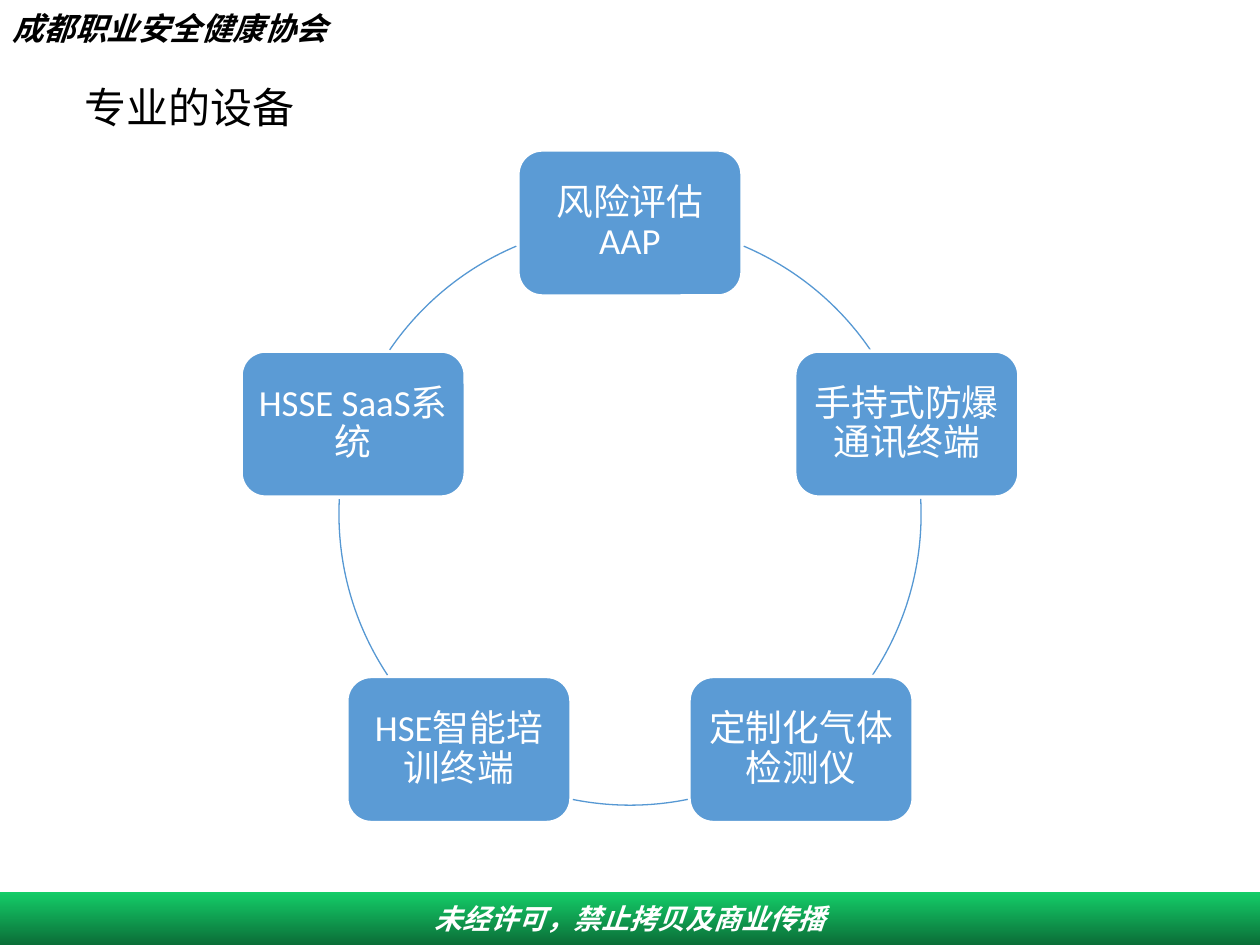
from math import cos, radians, sin

from pptx import Presentation
from pptx.dml.color import RGBColor
from pptx.enum.shapes import MSO_SHAPE as SHAPE
from pptx.enum.text import MSO_ANCHOR as ANCHOR, PP_ALIGN as ALIGN
from pptx.util import Inches, Pt

COLORS = {
    "white": "FFFFFF", "black": "000000", "box": "5B9BD5", "arc": "5698D3",
    "green": "14CD68", "dark_green": "0B6E38",
}


def rgb(name):
    return RGBColor.from_string(COLORS[name])


def write(sp, text, size, color, font="Calibri", bold=False, italic=False,
          align=ALIGN.LEFT, anchor=ANCHOR.MIDDLE, spacing=1.0):
    tf = sp.text_frame
    tf.word_wrap = True
    tf.vertical_anchor = anchor
    p = tf.paragraphs[0]
    p.alignment = align
    p.line_spacing = spacing
    r = p.add_run()
    r.text = text
    r.font.name, r.font.size = font, Pt(size)
    r.font.bold, r.font.italic = bold, italic
    r.font.color.rgb = rgb(color)


prs = Presentation()
prs.slide_width, prs.slide_height = Inches(10), Inches(7.5)
s = prs.slides.add_slide(prs.slide_layouts[5])

# Header and footer bands
header = s.shapes.add_shape(SHAPE.RECTANGLE, 0, 0, Inches(10), Inches(0.45))
header.fill.solid()
header.fill.fore_color.rgb = rgb("white")
write(header, "成都职业安全健康协会", 18, "black", font="Arial", bold=True, italic=True)

footer = s.shapes.add_shape(SHAPE.RECTANGLE, 0, Inches(7.08), Inches(10), Inches(0.42))
footer.fill.gradient()
footer.fill.gradient_angle = 270
for stop, color, position in zip(footer.fill.gradient_stops, ("green", "dark_green"), (0, 1)):
    stop.color.rgb = rgb(color)
    stop.position = position
write(footer, "未经许可，禁止拷贝及商业传播", 16, "white", bold=True, italic=True,
      align=ALIGN.CENTER)

for band in (header, footer):
    band.line.fill.background()
    band.shadow.inherit = False

# Title
title = s.shapes.title
title.left, title.top = Inches(0.57), Inches(0.6)
title.width, title.height = Inches(5.18), Inches(0.5)
write(title, "专业的设备", 24, "black", font="Noto Sans CJK SC", anchor=ANCHOR.TOP)

# Cycle: boxes evenly spaced on a circle, each followed by an arc to the next
CX, CY, RADIUS = 5, 4.08, 2.31
BOX_W, BOX_H = 1.78, 1.16
devices = [  # label, arc start and end in degrees
    ("风险评估AAP", 293, 325.65),
    ("手持式防爆通讯终端", 357.02, 33.58),
    ("定制化气体检测仪", 78.56, 101.45),
    ("HSE智能培训终端", 146.42, 182.98),
    ("HSSE SaaS系统", 214.35, 247),
]
for i, (label, start, end) in enumerate(devices):
    angle = radians(-90 + i * 360 / len(devices))
    x, y = CX + RADIUS * cos(angle), CY + RADIUS * sin(angle)
    box = s.shapes.add_shape(SHAPE.ROUNDED_RECTANGLE, Inches(x - BOX_W / 2),
                             Inches(y - BOX_H / 2), Inches(BOX_W), Inches(BOX_H))
    box.shadow.inherit = False
    box.fill.solid()
    box.fill.fore_color.rgb = rgb("box")
    box.line.color.rgb = rgb("white")
    box.line.width = Pt(2)
    tf = box.text_frame
    tf.margin_left = tf.margin_right = tf.margin_top = tf.margin_bottom = Inches(0.04)
    write(box, label, 21, "white", align=ALIGN.CENTER, spacing=0.9)

    arc = s.shapes.add_shape(SHAPE.ARC, Inches(CX - RADIUS), Inches(CY - RADIUS),
                             Inches(2 * RADIUS), Inches(2 * RADIUS))
    arc.shadow.inherit = False
    arc.fill.background()
    arc.line.color.rgb = rgb("arc")
    arc.line.width = Pt(0.75)
    # Arc angles are stored in 60000ths of a degree, adjustments in 100000ths
    arc.adjustments[0], arc.adjustments[1] = start * 0.6, end * 0.6

prs.save("out.pptx")
